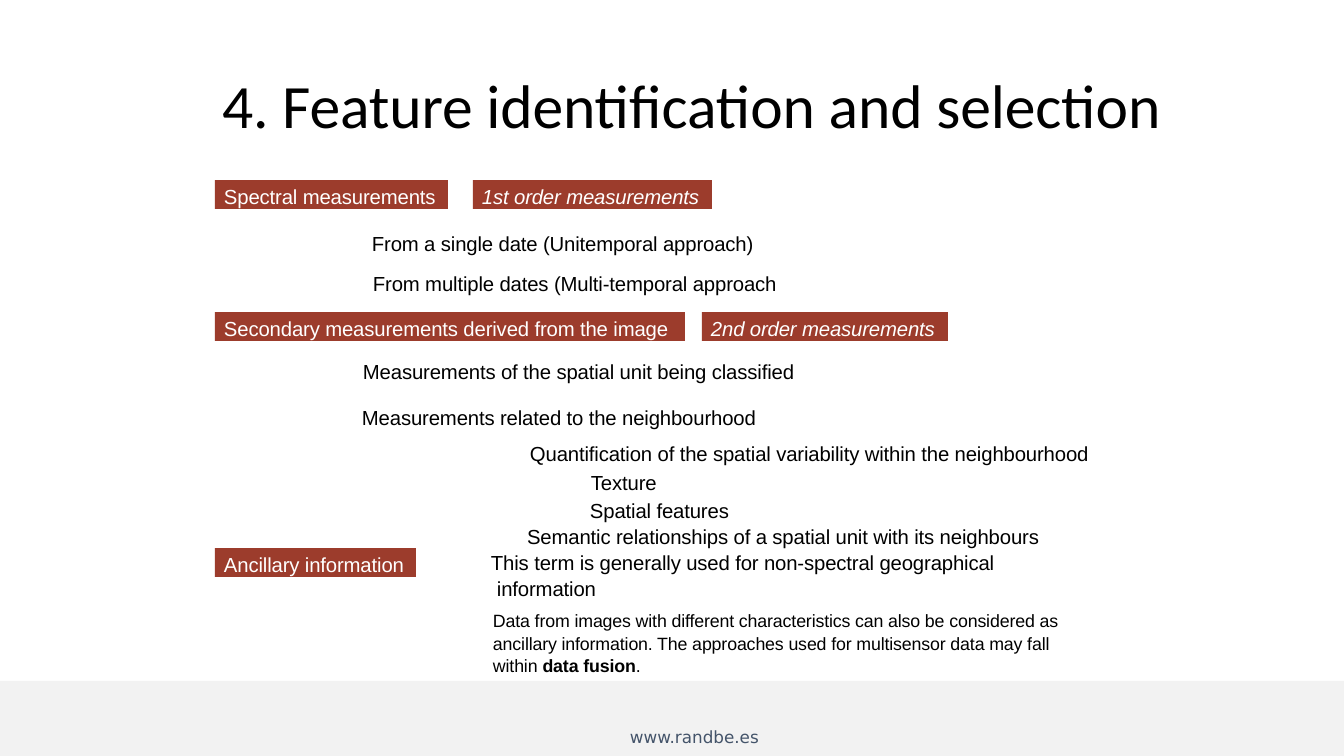
from pptx import Presentation
from pptx.util import Emu, Pt
from pptx.dml.color import RGBColor
from pptx.enum.shapes import MSO_SHAPE
from pptx.enum.text import MSO_ANCHOR

RECTANGLE = MSO_SHAPE.RECTANGLE
TOP, MIDDLE = MSO_ANCHOR.TOP, MSO_ANCHOR.MIDDLE

PX = 9071  # EMU in one px
COLORS = {"tag": "9C3C2C", "footer": "F2F2F2", "white": "FFFFFF",
          "black": "000000", "address": "44546A"}
BODY_SIZE, SMALL_SIZE = 14.5, 12.7
TAG_HEIGHT = 29

# Content: text, left, top, width, italic
TAGS = [
    ("Spectral measurements", 215, 180, 233, False),
    ("1st order measurements", 473, 180, 239, True),
    ("Secondary measurements derived from the image", 215, 312, 470, False),
    ("2nd order measurements", 702, 312, 246, True),
    ("Ancillary information", 215, 548, 201, False),
]

# Boxes: place, line spacing, then paragraphs as
# (spans, left indent, first line indent, space before, size); odd spans are bold
BODY_BOXES = [
    ((371, 216, 413, 79), 1.62, [
        (["From a single date (Unitemporal approach)"], 1, 0, 0, BODY_SIZE),
        (["From multiple dates (Multi-temporal approach"], 2, 0, 1, BODY_SIZE),
    ]),
    ((361, 359, 739, 182), 1.0, [
        (["Measurements of the spatial unit being classified"], 2, 0, 0, BODY_SIZE),
        (["Measurements related to the neighbourhood"], 1, 0, 22, BODY_SIZE),
        (["Quantification of the spatial variability within the neighbourhood"],
         169, 0, 12, BODY_SIZE),
        (["Texture"], 230, 0, 4, BODY_SIZE),
        (["Spatial features"], 229, 0, 4, BODY_SIZE),
        (["Semantic relationships of a spatial unit with its neighbours"],
         166, 0, 1, BODY_SIZE),
    ]),
    ((490, 549, 580, 122), 1.06, [
        (["This term is generally used for non-spectral geographical information"],
         7, -6, 0, BODY_SIZE),
        (["Data from images with different characteristics can also be considered as "
          "ancillary information. The approaches used for multisensor data may fall "
          "within ", "data fusion", "."], 3, 0, 8, SMALL_SIZE),
    ]),
]


def px(value):
    return Emu(value * PX)


def add_bar(page, place, color):
    bar = page.shapes.add_shape(RECTANGLE, *map(px, place))
    bar.shadow.inherit = False
    bar.fill.solid()
    bar.fill.fore_color.rgb = RGBColor.from_string(COLORS[color])
    bar.line.fill.background()
    return bar


def set_frame(box, insets=(0, 0, 0, 0), anchor=TOP):
    frame = box.text_frame
    frame.word_wrap = True
    frame.vertical_anchor = anchor
    (frame.margin_left, frame.margin_top,
     frame.margin_right, frame.margin_bottom) = map(px, insets)
    return frame


def add_box(page, place, **options):
    return set_frame(page.shapes.add_textbox(*map(px, place)), **options)


def indent(para, left, first=0):
    properties = para._p.get_or_add_pPr()
    properties.set("marL", str(px(left)))
    properties.set("indent", str(px(first)))
    properties.set("algn", "l")


def style(span, size, color="black", font="Arial", spacing=-10):
    span.font.name = font
    span.font.size = Pt(size)
    span.font.color.rgb = RGBColor.from_string(COLORS[color])
    span._r.get_or_add_rPr().set("spc", str(spacing))


def main():
    deck = Presentation()
    deck.slide_width, deck.slide_height = px(1344), px(756)
    page = deck.slides.add_slide(deck.slide_layouts[6])

    # Footer
    add_bar(page, (0, 681, 1344, 75), "footer")
    para = add_box(page, (620, 722, 173, 30), insets=(10, 5, 10, 5)).paragraphs[0]
    para.text = "www.randbe.es"
    style(para.runs[0], 12, "address", "DejaVu Sans", 0)

    # Title
    para = add_box(page, (221, 66, 1052, 75), anchor=MIDDLE).paragraphs[0]
    para.text = "4. Feature identification and selection"
    indent(para, 1)
    style(para.runs[0], 44, font="Calibri")

    # Red tags
    for text, left, top, width, italic in TAGS:
        tag = add_bar(page, (left, top, width, TAG_HEIGHT), "tag")
        para = set_frame(tag, insets=(0, 4, 0, 0)).paragraphs[0]
        para.text = text
        indent(para, 9)
        style(para.runs[0], BODY_SIZE, "white")
        para.runs[0].font.italic = italic

    # Body text
    for place, line_spacing, lines in BODY_BOXES:
        frame = add_box(page, place)
        for number, (spans, left, first, before, size) in enumerate(lines):
            para = frame.add_paragraph() if number else frame.paragraphs[0]
            indent(para, left, first)
            para.line_spacing = line_spacing
            if before:
                para.space_before = px(before)
            for position, text in enumerate(spans):
                span = para.add_run()
                span.text = text
                style(span, size)
                span.font.bold = position % 2 == 1

    deck.save("out.pptx")


if __name__ == "__main__":
    main()
